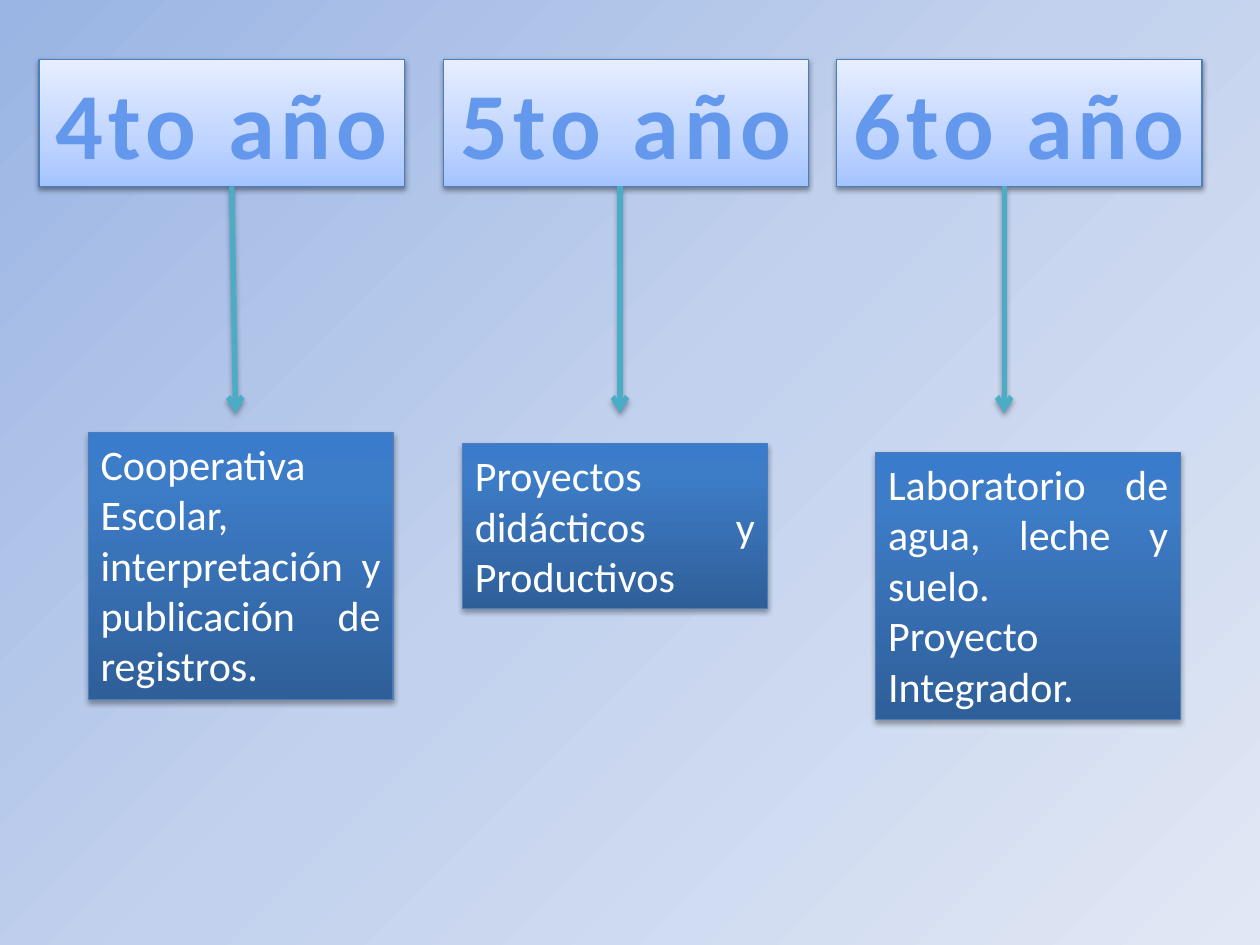
from lxml import etree
from pptx import Presentation
from pptx.dml.color import RGBColor
from pptx.enum.shapes import MSO_CONNECTOR, MSO_SHAPE
from pptx.enum.text import MSO_ANCHOR, MSO_AUTO_SIZE, PP_ALIGN
from pptx.oxml.ns import qn
from pptx.util import Inches, Pt

RECT = MSO_SHAPE.RECTANGLE
STRAIGHT = MSO_CONNECTOR.STRAIGHT
CENTER, JUSTIFY = PP_ALIGN.CENTER, PP_ALIGN.JUSTIFY
TOP = MSO_ANCHOR.TOP
FIT_SHAPE = MSO_AUTO_SIZE.SHAPE_TO_FIT_TEXT

COLUMNS = 100
FONT = "Calibri"
BORDER, ARROW, WHITE, OUTLINE = "4B7EBC", "4BACC6", "FFFFFF", "F4F6F9"
BACKGROUND = [(0, "9AB5E4"), (50, "C2D1ED"), (100, "E1E8F5")]
PALE = [(0, "A4C4FF"), (35, "BFD4FF"), (100, "E6EEFF")]
DEEP = [(0, "2F5F99"), (80, "3D7CC7"), (100, "3A7CCB")]
LETTERS = [(10, "6398ED"), (75, "265EA0")]


def rgb(color):
    return RGBColor.from_string(color)


def add(parent, tag, **attrs):
    return etree.SubElement(parent, qn(tag), {k: str(v) for k, v in attrs.items()})


class Deck:
    def __init__(self):
        self.prs = Presentation()
        self.prs.slide_width, self.prs.slide_height = Inches(10), Inches(7.5)
        self.cell = self.prs.slide_width / COLUMNS
        self.s = self.prs.slides.add_slide(self.prs.slide_layouts[6])

    def grid(self, *cells):
        return [round(c * self.cell) for c in cells]

    def gradient(self, fill, owner, stops, angle):
        fill.gradient()
        grad = next(owner.iter(qn("a:gradFill")))
        for child in list(grad):
            grad.remove(child)
        gs_list = add(grad, "a:gsLst")
        for pos, color in stops:
            gs = add(gs_list, "a:gs", pos=pos * 1000)
            add(gs, "a:srgbClr", val=color)
        add(grad, "a:lin", ang=angle * 60000, scaled=0)

    def background(self, stops):
        self.gradient(self.s.background.fill, self.s.element, stops, 45)

    def shadow(self, sp, opacity, distance):
        sp_pr = sp.element.spPr
        effects = sp_pr.find(qn("a:effectLst"))
        if effects is None:
            effects = add(sp_pr, "a:effectLst")
        outer = add(effects, "a:outerShdw", blurRad=Pt(3.1), dist=Pt(distance),
                    dir=90 * 60000, rotWithShape=0)
        add(add(outer, "a:srgbClr", val="000000"), "a:alpha", val=opacity * 1000)

    def box(self, at, lines, stops, size, align, wrap):
        sp = self.s.shapes.add_shape(RECT, *self.grid(*at))
        self.gradient(sp.fill, sp.element.spPr, stops, 270)
        sp.line.color.rgb = rgb(BORDER)
        sp.line.width = Pt(0.75)
        sp.shadow.inherit = False
        tf = sp.text_frame
        tf.text = "\n".join(lines)
        tf.word_wrap = wrap
        tf.auto_size = FIT_SHAPE
        tf.vertical_anchor = TOP
        for p in tf.paragraphs:
            p.alignment = align
            for r in p.runs:
                r.font.name = FONT
                r.font.size = Pt(size)
                r.font.color.rgb = rgb(WHITE)
        return sp

    def year(self, left, text):
        sp = self.box((left, 4.7, 29, 10.1), [text], PALE, 54, CENTER, False)
        self.shadow(sp, 38, 1.6)
        font = sp.text_frame.paragraphs[0].runs[0].font
        font.bold = True
        r_pr = sp.element.txBody.find(".//" + qn("a:rPr"))
        r_pr.set("spc", "300")
        self.gradient(font.fill, r_pr, LETTERS, 90)
        ln = add(r_pr, "a:ln", w=Pt(0.9))
        add(add(ln, "a:solidFill"), "a:srgbClr", val=OUTLINE)
        r_pr.insert(0, ln)

    def project(self, left, top, height, lines):
        sp = self.box((left, top, 24.2, height), lines, DEEP, 24, JUSTIFY, True)
        self.shadow(sp, 35, 1.8)

    def arrow(self, start, end):
        cx = self.s.shapes.add_connector(STRAIGHT, *self.grid(start, 14.8, end, 32.8))
        cx.line.color.rgb = rgb(ARROW)
        cx.line.width = Pt(3)
        add(cx.element.spPr.find(qn("a:ln")), "a:tailEnd", type="arrow")
        self.shadow(cx, 35, 1.8)


def main():
    deck = Deck()
    deck.background(BACKGROUND)
    for left, text in [(3.1, "4to año"), (35.2, "5to año"), (66.4, "6to año")]:
        deck.year(left, text)
    for start, end in [(18.4, 18.7), (49.2, 49.2), (79.7, 79.7)]:
        deck.arrow(start, end)
    projects = [
        (7, 34.3, 21.2, ["Cooperativa Escolar, interpretación y publicación de registros."]),
        (36.7, 35.2, 13.1, ["Proyectos didácticos y Productivos"]),
        (69.5, 35.9, 21.2, ["Laboratorio de agua, leche y suelo.", "Proyecto Integrador."]),
    ]
    for project in projects:
        deck.project(*project)
    deck.prs.save("out.pptx")


if __name__ == "__main__":
    main()
